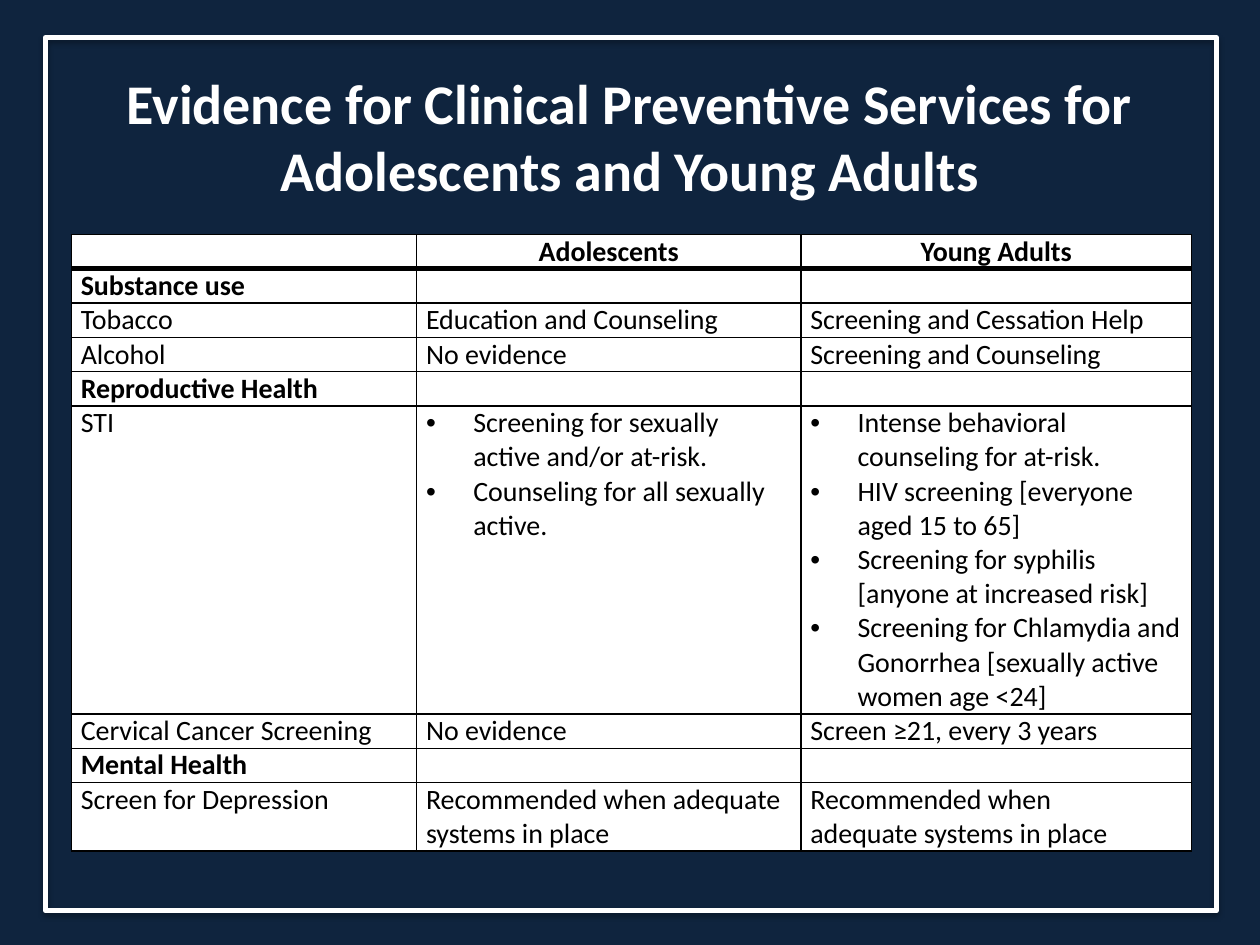
"""Build the slide on evidence for clinical preventive services."""
import pptx
import pptx.dml.color
import pptx.enum.shapes
import pptx.enum.text
import pptx.oxml
import pptx.oxml.ns
import pptx.util
from lxml import etree

Pt = pptx.util.Pt
RGBColor = pptx.dml.color.RGBColor
ALIGN = pptx.enum.text.PP_ALIGN
ANCHOR = pptx.enum.text.MSO_ANCHOR
qn = pptx.oxml.ns.qn

WHITE = RGBColor(0xFF, 0xFF, 0xFF)
BLACK = RGBColor(0x00, 0x00, 0x00)
NAVY = RGBColor(0x0F, 0x24, 0x3E)
NAVY_LIGHT = RGBColor(0x10, 0x26, 0x40)

TITLE = "Evidence for Clinical Preventive Services for Adolescents and Young Adults"
COLUMNS = [197.3, 219.6, 223.2]
HEIGHTS = [15, 15, 18, 15, 15, 104, 15, 15, 31]
SECTIONS = {"Substance use", "Reproductive Health", "Mental Health"}
ROWS = [
    ["", "Adolescents", "Young Adults"],
    ["Substance use", "", ""],
    ["Tobacco", "Education and Counseling", "Screening and Cessation Help"],
    ["Alcohol", "No evidence", "Screening and Counseling"],
    ["Reproductive Health", "", ""],
    ["STI",
     ["Screening for sexually active and/or at-risk.",
      "Counseling for all sexually active."],
     ["Intense behavioral counseling for at-risk.",
      "HIV screening [everyone aged 15 to 65]",
      "Screening for syphilis [anyone at increased risk]",
      "Screening for Chlamydia and Gonorrhea [sexually active women age <24]"]],
    ["Cervical Cancer Screening", "No evidence", "Screen ≥21, every 3 years"],
    ["Mental Health", "", ""],
    ["Screen for Depression", "Recommended when adequate systems in place",
     "Recommended when\nadequate systems in place"],
]


class Deck:
    """Hold the text style and the current slide."""

    font = "Calibri"
    body_size = 16

    def __init__(self):
        """Start a presentation with one title-only slide."""
        self.prs = pptx.Presentation()
        self.prs.slide_width, self.prs.slide_height = Pt(720), Pt(540)
        self.s = self.prs.slides.add_slide(self.prs.slide_layouts[5])

    def apply(self, obj, values):
        """Set every attribute named in a dict."""
        for name, value in values.items():
            setattr(obj, name, value)

    def add_text(self, p, text, size, color, bold):
        """Add one styled run to a paragraph."""
        r = p.add_run()
        r.text = text
        self.apply(r.font, {"name": self.font, "size": Pt(size), "bold": bold})
        r.font.color.rgb = color

    def background(self, first, second):
        """Fill the background with a gradient."""
        fill = self.s.background.fill
        fill.gradient()
        fill.gradient_angle = 90
        for stop, position, color in zip(fill.gradient_stops, (0, 0.19), (first, second)):
            stop.position = position
            stop.color.rgb = color

    def frame(self, x, y, w, h):
        """Draw the outlined border behind everything else."""
        sp = self.s.shapes.add_shape(
            pptx.enum.shapes.MSO_SHAPE.RECTANGLE, Pt(x), Pt(y), Pt(w), Pt(h))
        sp.fill.background()
        sp.line.color.rgb = WHITE
        sp.line.width = Pt(3)
        sp.shadow.inherit = False
        effects = sp._element.spPr.find(qn("a:effectLst"))
        shadow = etree.SubElement(
            effects, qn("a:outerShdw"), blurRad=str(Pt(3.1)), dist=str(Pt(1.8)),
            dir="5400000", rotWithShape="0")
        color = etree.SubElement(shadow, qn("a:srgbClr"), val=str(BLACK))
        etree.SubElement(color, qn("a:alpha"), val="35000")
        self.s.shapes._spTree.insert(2, sp._element)

    def title(self, text, x, y, w, h):
        """Place and format the title placeholder."""
        sp = self.s.shapes.title
        self.apply(sp, {"left": Pt(x), "top": Pt(y), "width": Pt(w), "height": Pt(h)})
        tf = sp.text_frame
        self.apply(tf, {"word_wrap": True, "vertical_anchor": ANCHOR.MIDDLE})
        p = tf.paragraphs[0]
        p.alignment = ALIGN.CENTER
        self.add_text(p, text, 32, WHITE, True)

    def border(self, cell, side, width):
        """Draw one side of a cell."""
        ln = etree.SubElement(cell._tc.get_or_add_tcPr(), qn("a:ln" + side), w=str(Pt(width)))
        fill = etree.SubElement(ln, qn("a:solidFill"))
        etree.SubElement(fill, qn("a:srgbClr"), val=str(BLACK))

    def bullet(self, p):
        """Give a paragraph a hanging bullet."""
        pPr = p._p.get_or_add_pPr()
        pPr.set("marL", str(Pt(27)))
        pPr.set("indent", str(Pt(-27)))
        etree.SubElement(pPr, qn("a:buFont"), typeface="Arial")
        etree.SubElement(pPr, qn("a:buChar"), char="•")

    def cell(self, cell, content, row, anchor):
        """Fill and format one table cell."""
        self.apply(cell, {"margin_left": Pt(5.4), "margin_right": Pt(5.4),
                          "margin_top": 0, "margin_bottom": 0, "vertical_anchor": anchor})
        for side, width in {"L": 1, "R": 1, "T": 3 if row == 1 else 1,
                            "B": 3 if row == 0 else 1}.items():
            self.border(cell, side, width)
        cell.fill.solid()
        cell.fill.fore_color.rgb = WHITE
        tf = cell.text_frame
        bulleted = isinstance(content, list)
        for i, text in enumerate(content if bulleted else content.split("\n")):
            p = tf.add_paragraph() if i else tf.paragraphs[0]
            if bulleted:
                self.bullet(p)
            p.alignment = ALIGN.LEFT if row else ALIGN.CENTER
            if text:
                self.add_text(p, text, self.body_size, BLACK, row == 0 or text in SECTIONS)
            else:
                etree.SubElement(p._p, qn("a:endParaRPr"), sz=str(self.body_size * 100))

    def table(self, rows, columns, heights, x, y, h):
        """Add the table of services."""
        shape = self.s.shapes.add_table(
            len(rows), len(columns), Pt(x), Pt(y), Pt(sum(columns)), Pt(h))
        table = shape.table
        self.apply(table, {"first_row": False, "horz_banding": False})
        for column, width in zip(table.columns, columns):
            column.width = Pt(width)
        for i, (row, height) in enumerate(zip(rows, heights)):
            table.rows[i].height = Pt(height)
            anchor = ANCHOR.TOP if height > 20 else ANCHOR.BOTTOM
            for j, content in enumerate(row):
                self.cell(table.cell(i, j), content, i, anchor)
        shape.height = Pt(h)


def main():
    """Build and save the slide."""
    deck = Deck()
    deck.background(NAVY, NAVY_LIGHT)
    deck.frame(26, 21.5, 669, 499)
    deck.title(TITLE, 36, 37.5, 648, 80)
    deck.table(ROWS, COLUMNS, HEIGHTS, 40.8, 134, 345.6)
    deck.prs.save("out.pptx")


if __name__ == "__main__":
    main()
